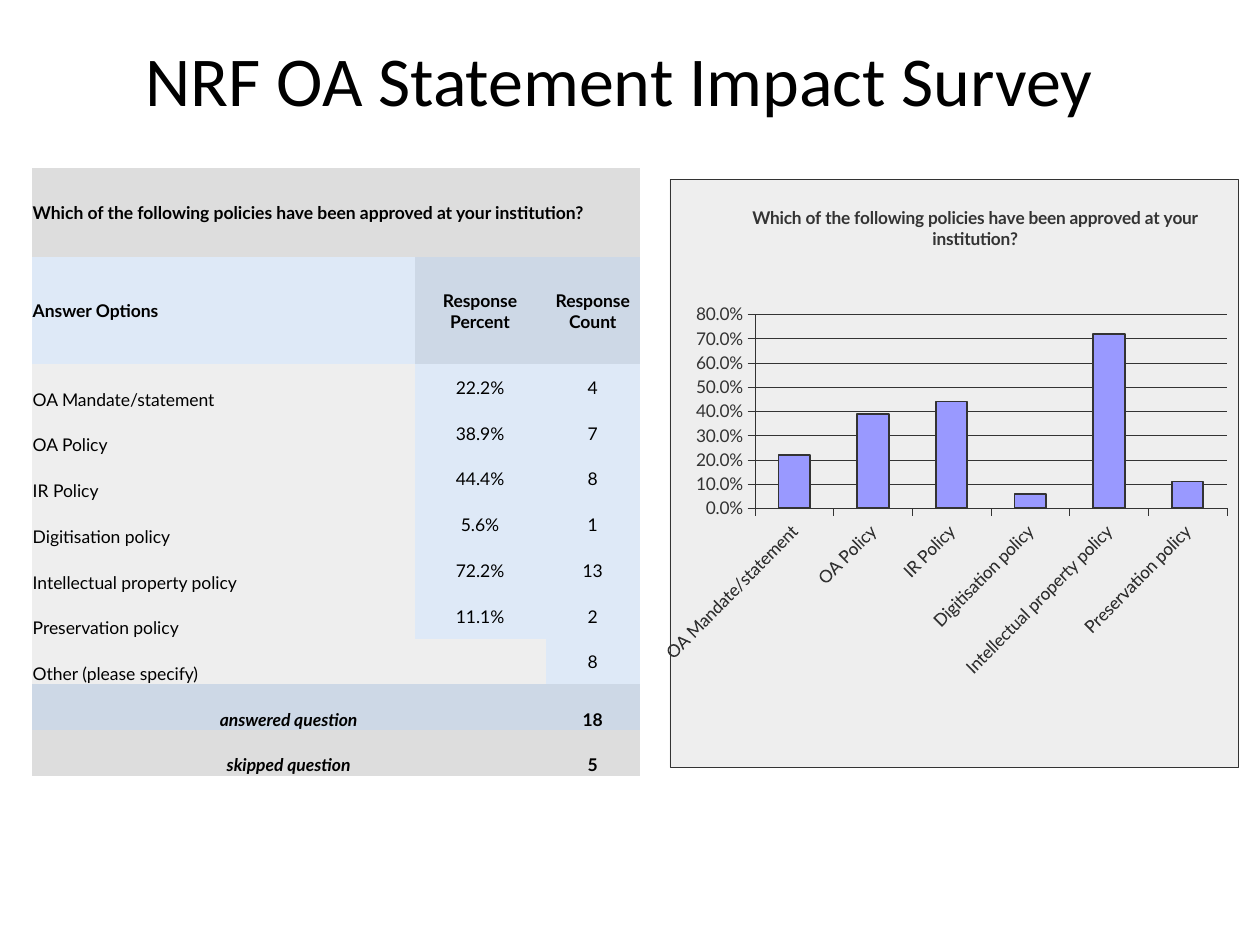
from pptx import Presentation
from pptx import util as u
from pptx.chart import data as cd
from pptx.dml import color as dc
from pptx.enum import chart as ec, text as et
from pptx.oxml import ns, parse_xml

ASK = "Which of the following policies have been approved at your institution?"
POLICIES = [
    ("OA Mandate/statement", "22.2%", 0.22, 4),
    ("OA Policy", "38.9%", 0.39, 7),
    ("IR Policy", "44.4%", 0.44, 8),
    ("Digitisation policy", "5.6%", 0.06, 1),
    ("Intellectual property policy", "72.2%", 0.72, 13),
    ("Preservation policy", "11.1%", 0.11, 2),
]
GREY, PALE, BLUE, STEEL, INK = "DDDDDD", "EEEEEE", "DEE9F7", "CDD8E6", "333333"
NO_STYLE = "{2D5ABB26-0587-4C30-8999-92F81FD0307C}"
LEFT, MID = et.PP_ALIGN.LEFT, et.PP_ALIGN.CENTER


def rgb(code):
    """Turn a hex string into a colour."""
    return dc.RGBColor.from_string(code)


def style(font, size, name, code, bold=False, italic=False):
    """Set all the looks of a font."""
    font.size, font.name = u.Pt(size), name
    font.bold, font.italic = bold, italic
    font.color.rgb = rgb(code)


def stroke(line, width):
    """Give a line the dark ink at a width in points."""
    line.color.rgb, line.width = rgb(INK), u.Pt(width)


def place(shape, box):
    """Move a shape to a box."""
    shape.left, shape.top, shape.width, shape.height = map(u.Inches, box)


def add_title(slide, box):
    """Fill the title placeholder."""
    title = slide.shapes.title
    place(title, box)
    frame = title.text_frame
    frame.text = "NRF OA Statement Impact Survey"
    frame.vertical_anchor = et.MSO_ANCHOR.MIDDLE
    para = frame.paragraphs[0]
    para.alignment = MID
    style(para.font, 40, "Calibri", "000000")


def fill_cell(cell, words, back, align=MID, low=False, bold=False, italic=False):
    """Write and colour one cell."""
    cell.margin_left = cell.margin_top = cell.margin_right = u.Inches(0.01)
    cell.margin_bottom = 0
    cell.vertical_anchor = et.MSO_ANCHOR.BOTTOM if low else et.MSO_ANCHOR.MIDDLE
    cell.fill.solid()
    cell.fill.fore_color.rgb = rgb(back)
    cell.text = words
    para = cell.text_frame.paragraphs[0]
    para.alignment = align
    style(para.font, 10, "Lato", "000000", bold, italic)


def add_answers(slide, box):
    """Build the table of answers with its totals."""
    wides, heads = (3.04, 1.04, 0.75), (0.71, 0.85)
    count = len(POLICIES) + 5
    frame = slide.shapes.add_table(count, len(wides), *map(u.Inches, box))
    frame.element.xpath(".//a:tableStyleId")[0].text = NO_STYLE
    table = frame.table
    table.first_row = table.horz_banding = False
    for col, wide in zip(table.columns, wides):
        col.width = u.Inches(wide)
    rest = (box[3] - sum(heads)) / (count - len(heads))
    for num, row in enumerate(table.rows):
        row.height = u.Inches(heads[num] if num < len(heads) else rest)

    table.cell(0, 0).merge(table.cell(0, 2))
    fill_cell(table.cell(0, 0), ASK, GREY, LEFT, bold=True)
    fill_cell(table.cell(1, 0), "Answer Options", BLUE, LEFT, bold=True)
    fill_cell(table.cell(1, 1), "Response Percent", STEEL, bold=True)
    fill_cell(table.cell(1, 2), "Response Count", STEEL, bold=True)
    for num, (name, label, _, votes) in enumerate(POLICIES, 2):
        fill_cell(table.cell(num, 0), name, PALE, LEFT, low=True)
        fill_cell(table.cell(num, 1), label, BLUE)
        fill_cell(table.cell(num, 2), str(votes), BLUE)

    other = count - 3
    for num in range(other, count):
        table.cell(num, 0).merge(table.cell(num, 1))
    fill_cell(table.cell(other, 0), "Other (please specify)", PALE, LEFT, low=True)
    fill_cell(table.cell(other, 2), "8", BLUE)
    totals = [("answered question", "18", STEEL), ("skipped question", "5", GREY)]
    for num, (name, votes, back) in enumerate(totals, other + 1):
        fill_cell(table.cell(num, 0), name, back, low=True, bold=True, italic=True)
        fill_cell(table.cell(num, 2), votes, back, low=True, bold=True)


def layout(inner=False, **spots):
    """Make a manual chart layout from fractions."""
    target = '<c:layoutTarget val="inner"/>' if inner else ""
    modes = "".join(f'<c:{key}Mode val="edge"/>' for key in "xy")
    sizes = "".join(f'<c:{key} val="{val}"/>' for key, val in spots.items())
    return parse_xml(
        f'<c:layout {ns.nsdecls("c")}><c:manualLayout>{target}{modes}{sizes}'
        "</c:manualLayout></c:layout>"
    )


def panel(line):
    """Make the pale fill of a chart part, with the given line XML."""
    return parse_xml(
        f'<c:spPr {ns.nsdecls("c", "a")}><a:solidFill><a:srgbClr val="{PALE}"/>'
        f"</a:solidFill>{line}</c:spPr>"
    )


def add_bars(slide, box):
    """Build the column chart of shares."""
    data = cd.CategoryChartData(number_format="0.0%")
    data.categories = [name for name, *_ in POLICIES]
    data.add_series("Series 1", [share for _, _, share, _ in POLICIES])
    chart = slide.shapes.add_chart(
        ec.XL_CHART_TYPE.COLUMN_CLUSTERED, *map(u.Inches, box), data
    ).chart
    chart.has_legend = False
    style(chart.font, 10, "Lato", INK)

    title = chart.chart_title
    title.text_frame.text = ASK
    style(title.text_frame.paragraphs[0].font, 10, "Lato", INK, bold=True)

    for axis in (chart.category_axis, chart.value_axis):
        axis.major_tick_mark = ec.XL_TICK_MARK.OUTSIDE
        axis.minor_tick_mark = ec.XL_TICK_MARK.NONE
        style(axis.tick_labels.font, 10, "Lato", INK)
        stroke(axis.format.line, 0.25)
    chart.element.xpath(".//c:catAx/c:txPr/a:bodyPr")[0].set("rot", "-2700000")
    scale = chart.value_axis
    scale.minimum_scale, scale.maximum_scale, scale.major_unit = 0, 0.8, 0.1
    scale.tick_labels.number_format = "0.0%"
    scale.tick_labels.number_format_is_linked = False
    stroke(scale.major_gridlines.format.line, 0.25)

    plot = chart.plots[0]
    plot.gap_width, plot.vary_by_categories = 150, False
    bars = plot.series[0].format
    bars.fill.solid()
    bars.fill.fore_color.rgb = rgb("9999FF")
    stroke(bars.line, 1)

    root = chart.element
    for old in root.xpath("c:chart/c:title/c:layout | .//c:plotArea/c:layout"):
        old.getparent().remove(old)
    root.xpath("c:chart/c:title/c:tx")[0].addnext(layout(x=0.14, y=0.04))
    area = root.xpath(".//c:plotArea")[0]
    area.insert(0, layout(inner=True, x=0.15, y=0.23, w=0.83, h=0.33))
    area.append(panel("<a:ln><a:noFill/></a:ln>"))
    edge = (
        f'<a:ln w="{u.Pt(0.25)}"><a:solidFill><a:srgbClr val="{INK}"/>'
        "</a:solidFill></a:ln>"
    )
    root.xpath("c:chart")[0].addnext(panel(edge))


def main():
    """Build and save the slide."""
    deck = Presentation()
    deck.slide_width, deck.slide_height = u.Inches(10), u.Inches(7.5)
    slide = deck.slides.add_slide(deck.slide_layouts[5])
    add_title(slide, (0, 0, 9.83, 1.25))
    add_answers(slide, (0.25, 1.33, 4.83, 4.83))
    add_bars(slide, (5.25, 1.42, 4.58, 4.67))
    deck.save("out.pptx")


if __name__ == "__main__":
    main()
